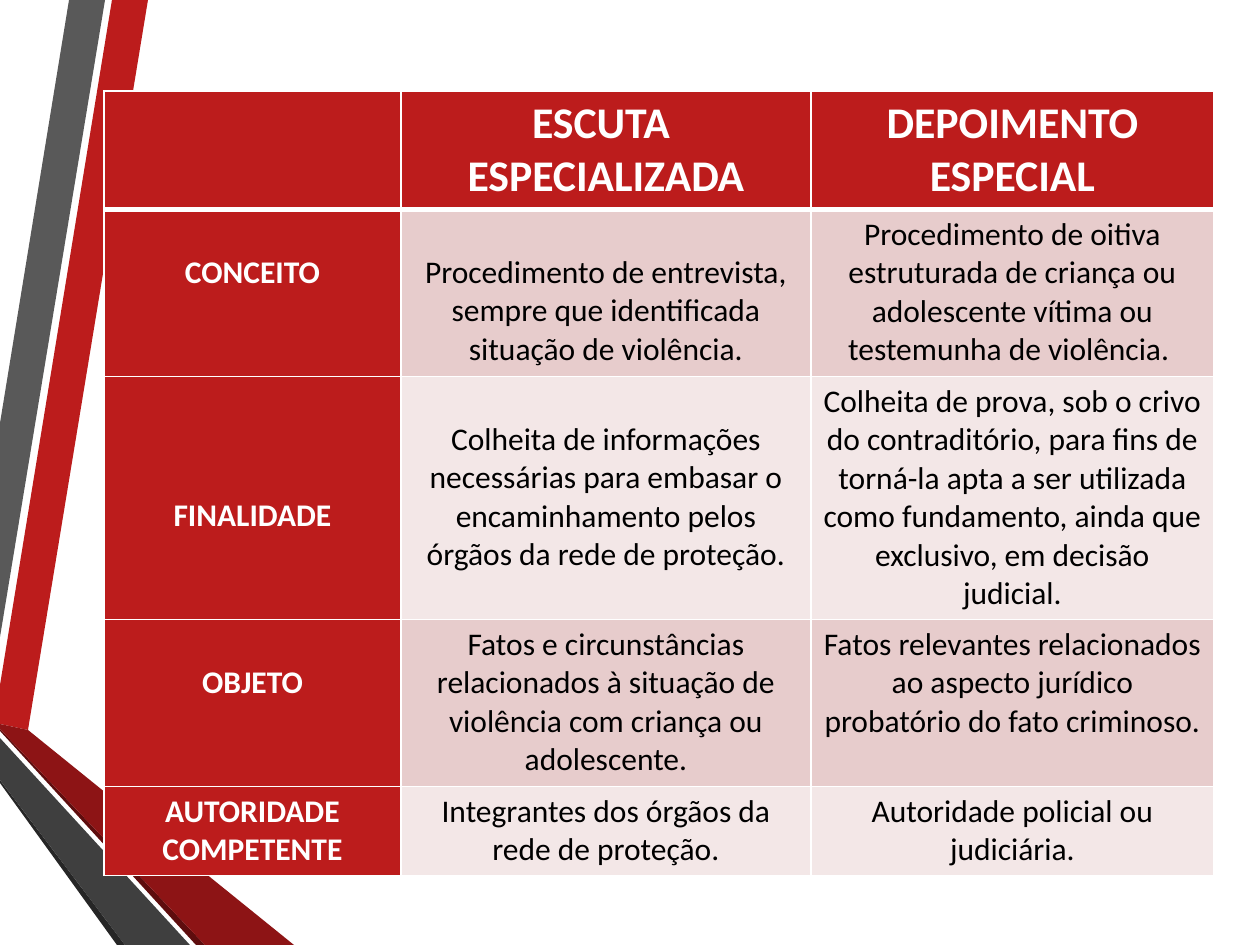
import pptx
import pptx.dml.color
import pptx.enum.text
import pptx.util
from lxml import etree
from pptx.oxml.ns import qn

PX = 914400 // 126
WIDTH, HEIGHT = 1260, 945
FONT = "Calibri"
RED, WHITE, BLACK = "BC1C1C", "FFFFFF", "000000"
BAND_COLORS = ["E7CCCC", "F3E7E7"]

# Fill and outline points in px, from back to front
RIBBONS = [
    (RED, [(0, 685), (0, 724), (28, 730), (148, 0), (112, 0)]),
    ("595959", [(105, 0), (69, 0), (0, 423), (0, 637)]),
    ("262626", [(0, 780), (0, 783), (117, 945), (125, 945)]),
    ("5E0D0E", [(0, 729), (0, 731), (196, 945), (205, 945)]),
    ("8D1415", [(0, 729), (205, 945), (294, 945), (28, 730), (0, 724)]),
    ("3F3F3F", [(0, 780), (125, 945), (190, 945), (0, 738)]),
]

TABLE_LEFT, TABLE_TOP = 104, 91
COLUMN_WIDTHS = [297, 410, 403]
ROW_HEIGHTS = [118, 167, 243, 167, 89]
CELL_MARGIN, LINE_HEIGHT = 6, 38

# Each cell: text and how many lines it is lowered by
ROWS = [
    [("", 0), ("ESCUTA \nESPECIALIZADA", 0), ("DEPOIMENTO\nESPECIAL", 0)],
    [("CONCEITO", 1),
     ("Procedimento de entrevista, sempre que identificada situação de violência.", 1),
     ("Procedimento de oitiva estruturada de criança ou adolescente vítima ou "
      "testemunha de violência. ", 0)],
    [("FINALIDADE", 3),
     ("Colheita de informações necessárias para embasar o encaminhamento pelos "
      "órgãos da rede de proteção.", 1),
     ("Colheita de prova, sob o crivo do contraditório, para fins de torná-la apta "
      "a ser utilizada como fundamento, ainda que exclusivo, em decisão judicial.", 0)],
    [("OBJETO", 1),
     ("Fatos e circunstâncias relacionados à situação de violência com criança ou "
      "adolescente.", 0),
     ("Fatos relevantes relacionados ao aspecto jurídico probatório do fato "
      "criminoso.", 0)],
    [("AUTORIDADE COMPETENTE", 0),
     ("Integrantes dos órgãos da rede de proteção.", 0),
     ("Autoridade policial ou judiciária.", 0)],
]


def rgb(color):
    return pptx.dml.color.RGBColor.from_string(color)


def add_ribbon(slide, color, points):
    builder = slide.shapes.build_freeform(*points[0], scale=PX)
    builder.add_line_segments(points[1:], close=True)
    shape = builder.convert_to_shape()
    shape.shadow.inherit = False
    shape.fill.solid()
    shape.fill.fore_color.rgb = rgb(color)
    shape.line.fill.background()


def set_borders(cell, row):
    """Draw white borders, thick on the line under the header row."""
    properties = cell._tc.get_or_add_tcPr()
    thick_side = {0: "lnB", 1: "lnT"}.get(row)
    for side in ("lnL", "lnR", "lnT", "lnB"):
        width = pptx.util.Pt(3 if side == thick_side else 0.96)
        line = etree.SubElement(properties, qn(f"a:{side}"), w=str(width))
        fill = etree.SubElement(line, qn("a:solidFill"))
        etree.SubElement(fill, qn("a:srgbClr"), val=WHITE)


def fill_cell(cell, row, column, text, lowered_lines):
    is_heading = row == 0 or column == 0
    set_borders(cell, row)
    cell.fill.solid()
    cell.fill.fore_color.rgb = rgb(RED if is_heading else BAND_COLORS[(row - 1) % 2])
    cell.margin_top = (CELL_MARGIN + lowered_lines * LINE_HEIGHT) * PX
    cell.margin_bottom = CELL_MARGIN * PX
    cell.text_frame.text = text
    for paragraph in cell.text_frame.paragraphs:
        paragraph.alignment = pptx.enum.text.PP_ALIGN.CENTER
        font = paragraph.font
        font.name = FONT
        font.size = pptx.util.Pt(25 if row == 0 else 18)
        font.bold = is_heading
        font.color.rgb = rgb(WHITE if is_heading else BLACK)
        for run in paragraph.runs:
            run.font.name = FONT
            run.font.size = font.size
            run.font.bold = is_heading
            run.font.color.rgb = font.color.rgb


def add_comparison_table(slide):
    table = slide.shapes.add_table(
        len(ROWS), len(COLUMN_WIDTHS), TABLE_LEFT * PX, TABLE_TOP * PX,
        sum(COLUMN_WIDTHS) * PX, sum(ROW_HEIGHTS) * PX).table
    for column, width in zip(table.columns, COLUMN_WIDTHS):
        column.width = width * PX
    for row, height in zip(table.rows, ROW_HEIGHTS):
        row.height = height * PX
    for row, cells in enumerate(ROWS):
        for column, (text, lowered_lines) in enumerate(cells):
            fill_cell(table.cell(row, column), row, column, text, lowered_lines)


def main():
    presentation = pptx.Presentation()
    presentation.slide_width = WIDTH * PX
    presentation.slide_height = HEIGHT * PX
    slide = presentation.slides.add_slide(presentation.slide_layouts[6])
    for color, points in RIBBONS:
        add_ribbon(slide, color, points)
    add_comparison_table(slide)
    presentation.save("out.pptx")


if __name__ == "__main__":
    main()
